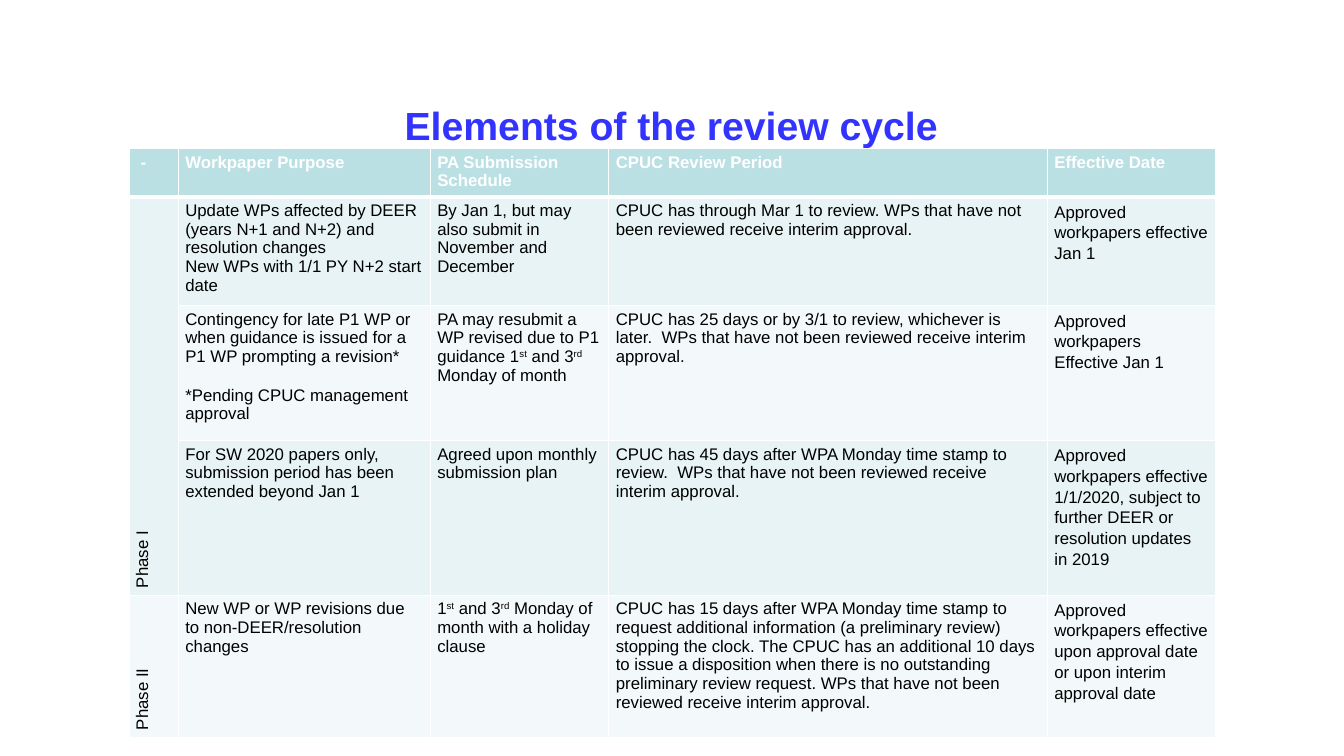
from dataclasses import dataclass

from lxml.etree import SubElement
from pptx import Presentation
from pptx.dml.color import RGBColor
from pptx.enum.text import MSO_ANCHOR, PP_ALIGN
from pptx.oxml.ns import qn
from pptx.util import Cm, Pt


@dataclass(frozen=True)
class Theme:
    font: str = "Arial"
    title_size: Pt = Pt(28)
    table_size: Pt = Pt(12)
    title: str = "3333FF"
    text: str = "000000"
    white: str = "FFFFFF"
    header: str = "BBE0E3"
    bands: tuple = ("E7F3F4", "F3F9FA")
    thin: Pt = Pt(1)
    thick: Pt = Pt(3)


THEME = Theme()
COLUMN_WIDTHS = (1.24, 6.35, 4.5, 11.05, 4.24)
ROW_HEIGHTS = (1.17, 2.62, 3.4, 3.89, 3.58)
PHASE_COLUMN, DATE_COLUMN = 0, 4

# Line breaks separate paragraphs; text between carets is superscript
ROWS = (
    (" -", "Workpaper Purpose", "PA Submission Schedule",
     "CPUC Review Period", "Effective Date"),
    ("Phase I",
     "Update WPs affected by DEER (years N+1 and N+2) and resolution changes\n"
     "New WPs with 1/1 PY N+2 start date",
     "By Jan 1, but may also submit in November and December",
     "CPUC has through Mar 1 to review. WPs that have not been reviewed "
     "receive interim approval.",
     "Approved workpapers effective Jan 1"),
    ("",
     "Contingency for late P1 WP or when guidance is issued for a P1 WP "
     "prompting a revision*\n*Pending CPUC management approval",
     "PA may resubmit a WP revised due to P1 guidance 1^st^ and 3^rd^ Monday of month",
     "CPUC has 25 days or by 3/1 to review, whichever is later.  WPs that "
     "have not been reviewed receive interim approval.",
     "Approved workpapers Effective Jan 1"),
    ("",
     "For SW 2020 papers only, submission period has been extended beyond Jan 1",
     "Agreed upon monthly submission plan",
     "CPUC has 45 days after WPA Monday time stamp to review.  WPs that have "
     "not been reviewed receive interim approval.",
     "Approved workpapers effective 1/1/2020, subject to further DEER or "
     "resolution updates in 2019"),
    ("Phase II",
     "New WP or WP revisions due to non-DEER/resolution changes",
     "1^st^ and 3^rd^ Monday of month with a holiday clause",
     "CPUC has 15 days after WPA Monday time stamp to request additional "
     "information (a preliminary review) stopping the clock. The CPUC has an "
     "additional 10 days to issue a disposition when there is no outstanding "
     "preliminary review request. WPs that have not been reviewed receive "
     "interim approval.",
     "Approved workpapers effective upon approval date or upon interim approval date"),
)


def set_font(paragraph, size, color, bold=False):
    font = paragraph.font
    font.name, font.size, font.bold = THEME.font, size, bold
    font.color.rgb = RGBColor.from_string(color)


def add_title(slide, text):
    shape = slide.shapes.add_textbox(Cm(5.97), Cm(1.75), Cm(21.89), Cm(2.77))
    frame = shape.text_frame
    frame.word_wrap = True
    frame.vertical_anchor = MSO_ANCHOR.MIDDLE
    paragraph = frame.paragraphs[0]
    paragraph.text = text
    paragraph.alignment = PP_ALIGN.CENTER
    set_font(paragraph, THEME.title_size, THEME.title, bold=True)


def set_borders(cell, top, bottom):
    properties = cell._tc.get_or_add_tcPr()
    widths = {"a:lnL": THEME.thin, "a:lnR": THEME.thin, "a:lnT": top, "a:lnB": bottom}
    for tag, width in widths.items():
        line = SubElement(properties, qn(tag), w=str(width))
        fill = SubElement(line, qn("a:solidFill"))
        SubElement(fill, qn("a:srgbClr"), val=THEME.white)


def add_runs(paragraph, text):
    for index, part in enumerate(text.split("^")):
        if part:
            run = paragraph.add_run()
            run.text = part
            if index % 2:
                run._r.get_or_add_rPr().set("baseline", "30000")


def write_cell(cell, text, color, bold):
    frame = cell.text_frame
    for index, line in enumerate(text.split("\n")):
        paragraph = frame.add_paragraph() if index else frame.paragraphs[0]
        add_runs(paragraph, line)
        set_font(paragraph, THEME.table_size, color, bold)
        if line.startswith("*"):
            paragraph.space_before = Pt(14)


def style_cell(cell, row, column):
    cell.margin_left = cell.margin_right = Cm(0.18)
    cell.margin_top = cell.margin_bottom = Cm(0.1)
    set_borders(cell,
                top=THEME.thick if row == 1 else THEME.thin,
                bottom=THEME.thick if row == 0 else THEME.thin)
    color = THEME.bands[(row - 1) % 2] if row else THEME.header
    cell.fill.solid()
    cell.fill.fore_color.rgb = RGBColor.from_string(color)
    if row and column == PHASE_COLUMN:
        cell.vertical_anchor = MSO_ANCHOR.MIDDLE
        cell._tc.get_or_add_tcPr().set("vert", "vert270")
    if row and column == DATE_COLUMN:
        paragraph = cell.text_frame.paragraphs[0]
        paragraph.line_spacing = 1.1
        paragraph.space_before, paragraph.space_after = Pt(10), Pt(3)


def add_review_table(slide):
    table = slide.shapes.add_table(
        len(ROWS), len(COLUMN_WIDTHS), Cm(3.25), Cm(3.75),
        Cm(sum(COLUMN_WIDTHS)), Cm(sum(ROW_HEIGHTS))).table
    table.horz_banding = False
    for column, width in zip(table.columns, COLUMN_WIDTHS):
        column.width = Cm(width)
    for row, height in zip(table.rows, ROW_HEIGHTS):
        row.height = Cm(height)
    for row, texts in enumerate(ROWS):
        for column, text in enumerate(texts):
            cell = table.cell(row, column)
            write_cell(cell, text, THEME.text if row else THEME.white, bold=row == 0)
            style_cell(cell, row, column)
    # Phase I covers three rows
    table.cell(1, PHASE_COLUMN).merge(table.cell(3, PHASE_COLUMN))


def main():
    presentation = Presentation()
    presentation.slide_width, presentation.slide_height = Cm(33.87), Cm(19.05)
    slide = presentation.slides.add_slide(presentation.slide_layouts[6])
    add_title(slide, "Elements of the review cycle")
    add_review_table(slide)
    presentation.save("out.pptx")


if __name__ == "__main__":
    main()
